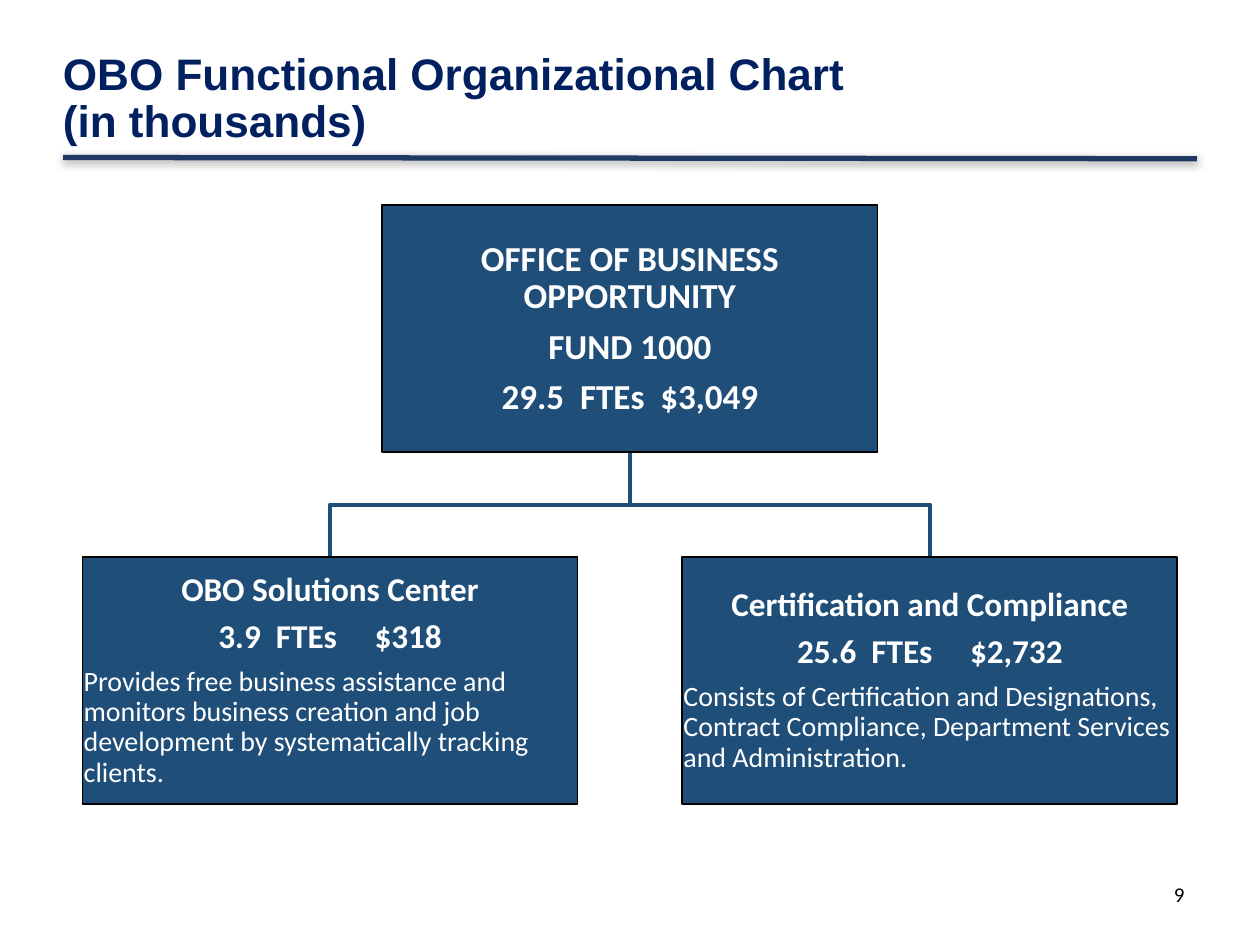
from lxml import etree
from pptx import Presentation
from pptx.dml.color import RGBColor
from pptx.enum.shapes import MSO_CONNECTOR, MSO_SHAPE
from pptx.enum.text import MSO_ANCHOR, PP_ALIGN
from pptx.oxml.ns import qn
from pptx.util import Inches, Pt

STRAIGHT = MSO_CONNECTOR.STRAIGHT
RECTANGLE = MSO_SHAPE.RECTANGLE
MIDDLE, TOP = MSO_ANCHOR.MIDDLE, MSO_ANCHOR.TOP
LEFT, CENTER, RIGHT = PP_ALIGN.LEFT, PP_ALIGN.CENTER, PP_ALIGN.RIGHT

NAVY, RULE, BLUE = "002060", "203864", "1F4E79"
WHITE, BLACK = "FFFFFF", "000000"
UNIT_WIDTH, UNIT_HEIGHT = 3.93, 1.96
CENTER_X, BRANCH_OFFSET = 5, 2.38
OFFICE_TOP, DIVISION_TOP = 1.63, 4.42
SPACE_WIDTH = 0.226


def color(hex_value):
    return RGBColor.from_string(hex_value)


def style(paragraph, size, hex_value, font="Calibri", bold=False, align=LEFT):
    paragraph.alignment = align
    paragraph.font.name = font
    paragraph.font.size = Pt(size)
    paragraph.font.bold = bold
    paragraph.font.color.rgb = color(hex_value)


def set_margins(frame, inches):
    frame.margin_left = frame.margin_right = Inches(inches)
    frame.margin_top = frame.margin_bottom = Inches(inches)


def add_label(slide, text, left, top, width, height, anchor):
    label = slide.shapes.add_textbox(
        Inches(left), Inches(top), Inches(width), Inches(height))
    frame = label.text_frame
    frame.word_wrap = True
    frame.vertical_anchor = anchor
    frame.paragraphs[0].text = text
    return frame


def add_title(slide, text):
    frame = add_label(slide, text, 0.5, 0.33, 6.86, 0.92, MIDDLE)
    set_margins(frame, 0)
    heading = frame.paragraphs[0]
    heading.line_spacing = 0.9
    style(heading, 25.2, NAVY, "Arial", True)


def add_title_rule(slide):
    rule = slide.shapes.add_connector(
        STRAIGHT, Inches(0.5), Inches(1.25), Inches(9.5), Inches(1.26))
    rule.line.color.rgb = color(RULE)
    rule.line.width = Pt(3)
    effects = etree.SubElement(rule._element.spPr, qn("a:effectLst"))
    shadow = etree.SubElement(
        effects, qn("a:outerShdw"), blurRad=str(Pt(5)), dist=str(Pt(1.6)),
        dir="5400000", algn="t", rotWithShape="0")
    tint = etree.SubElement(shadow, qn("a:srgbClr"), val=BLACK)
    etree.SubElement(tint, qn("a:alpha"), val="38000")


def add_branch(slide, end_x):
    start_y = OFFICE_TOP + UNIT_HEIGHT
    bend_y = (start_y + DIVISION_TOP) / 2
    corners = [(CENTER_X, bend_y), (end_x, bend_y), (end_x, DIVISION_TOP)]
    builder = slide.shapes.build_freeform(Inches(CENTER_X), Inches(start_y))
    builder.add_line_segments(
        [(Inches(x), Inches(y)) for x, y in corners], close=False)
    branch = builder.convert_to_shape()
    branch.shadow.inherit = False
    branch.fill.background()
    branch.line.color.rgb = color(BLUE)
    branch.line.width = Pt(2.25)


def add_figures(paragraph, figures, size, gaps):
    for index, figure in enumerate(figures):
        if index:
            gap = paragraph.add_run()
            gap.text = " "
            extra = (gaps[index - 1] - 1) * SPACE_WIDTH * size
            gap._r.get_or_add_rPr().set("spc", str(round(extra * 100)))
        paragraph.add_run().text = figure


def add_unit(slide, center_x, top, size, headings, figures, gaps, duties=""):
    unit = slide.shapes.add_shape(
        RECTANGLE, Inches(center_x - UNIT_WIDTH / 2), Inches(top),
        Inches(UNIT_WIDTH), Inches(UNIT_HEIGHT))
    unit.shadow.inherit = False
    unit.fill.solid()
    unit.fill.fore_color.rgb = color(BLUE)
    unit.line.color.rgb = color(BLACK)
    unit.line.width = Pt(1)
    frame = unit.text_frame
    frame.word_wrap = True
    frame.vertical_anchor = MIDDLE
    set_margins(frame, 0.01)

    for index, heading in enumerate(headings):
        paragraph = frame.add_paragraph() if index else frame.paragraphs[0]
        paragraph.text = heading
        style(paragraph, size, WHITE, bold=True, align=CENTER)
    budget = frame.add_paragraph()
    add_figures(budget, figures, size, gaps)
    style(budget, size, WHITE, bold=True, align=CENTER)
    if duties:
        description = frame.add_paragraph()
        description.text = duties
        style(description, 16, WHITE)
    for paragraph in frame.paragraphs:
        paragraph.line_spacing = 0.9
        paragraph.space_after = Pt(round(paragraph.font.size.pt * 0.35, 1))


def add_page_number(slide, number):
    frame = add_label(slide, number, 7.17, 6.95, 2.33, 0.4, TOP)
    style(frame.paragraphs[0], 12, BLACK, align=RIGHT)


def main():
    deck = Presentation()
    deck.slide_width, deck.slide_height = Inches(10), Inches(7.5)
    slide = deck.slides.add_slide(deck.slide_layouts[6])

    add_title_rule(slide)
    add_title(slide, "OBO Functional Organizational Chart\v(in thousands)")

    divisions = [
        ("OBO Solutions Center", ("3.9", "FTEs", "$318"),
         "Provides free business assistance and monitors business creation "
         "and job development by systematically tracking clients."),
        ("Certification and Compliance", ("25.6", "FTEs", "$2,732"),
         "Consists of Certification and Designations, Contract Compliance, "
         "Department Services and Administration."),
    ]
    centers = (CENTER_X - BRANCH_OFFSET, CENTER_X + BRANCH_OFFSET)
    for center_x in centers:
        add_branch(slide, center_x)
    add_unit(slide, CENTER_X, OFFICE_TOP, 20,
             ["OFFICE OF BUSINESS OPPORTUNITY", "FUND 1000"],
             ("29.5", "FTEs", "$3,049"), (2, 2))
    for center_x, (name, figures, duties) in zip(centers, divisions):
        add_unit(slide, center_x, DIVISION_TOP, 19, [name], figures, (2, 5), duties)

    add_page_number(slide, "9")
    deck.save("out.pptx")


if __name__ == "__main__":
    main()
